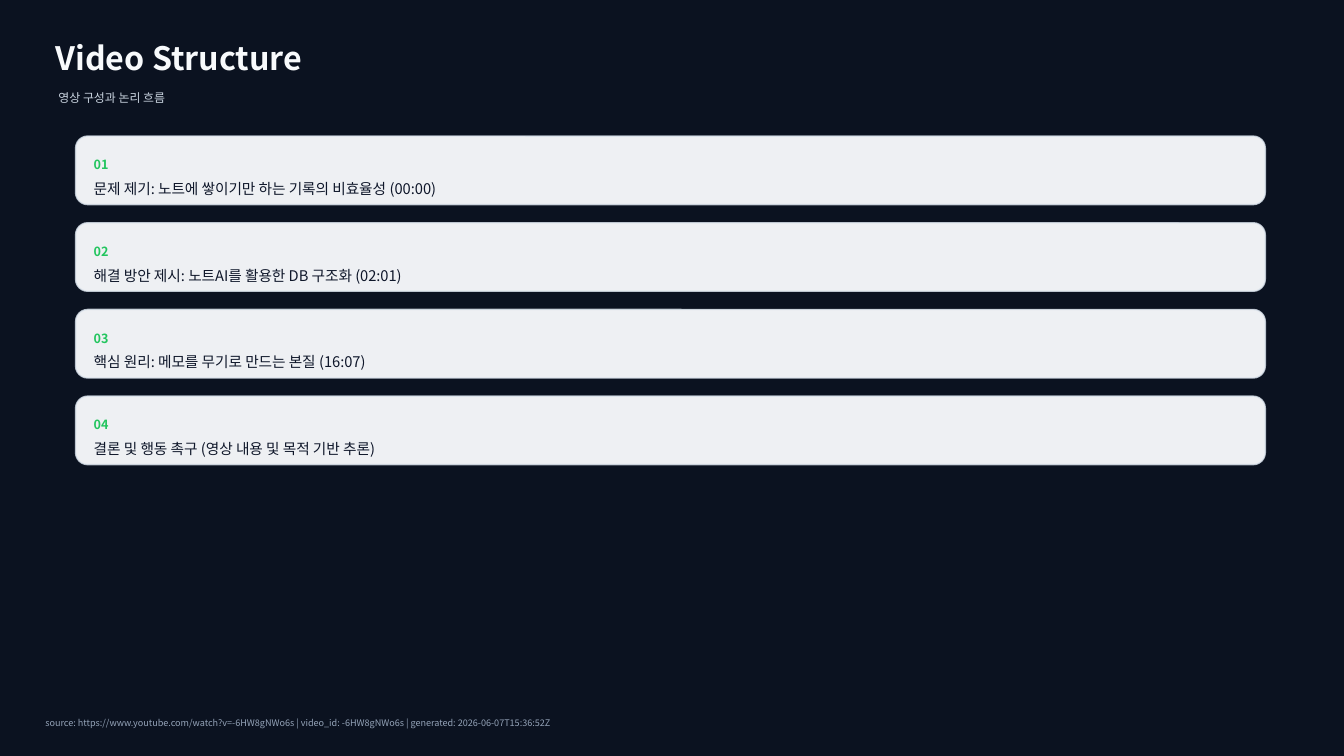
from lxml import etree
from pptx import Presentation
from pptx import util as u
from pptx.dml.color import RGBColor
from pptx.enum import shapes, text
from pptx.oxml import ns

NAVY = RGBColor(0x0B, 0x12, 0x20)
WHITE = RGBColor(0xF8, 0xFA, 0xFC)
MIST = RGBColor(0xCB, 0xD5, 0xE1)
EDGE = RGBColor(0xD7, 0xE0, 0xEA)
GREEN = RGBColor(0x22, 0xC5, 0x5E)
INK = RGBColor(0x0F, 0x17, 0x2A)
GREY = RGBColor(0x94, 0xA3, 0xB8)
FONT = "Noto Sans CJK KR"

WIDE, HIGH = 13.33, 7.5
LEFT, TOP = 0.75, 1.35
CARD_W, CARD_H, GAP = 11.8, 0.68, 0.18
PAD = 0.18

PARTS = [
    "문제 제기: 노트에 쌓이기만 하는 기록의 비효율성 (00:00)",
    "해결 방안 제시: 노트AI를 활용한 DB 구조화 (02:01)",
    "핵심 원리: 메모를 무기로 만드는 본질 (16:07)",
    "결론 및 행동 촉구 (영상 내용 및 목적 기반 추론)",
]
SOURCE = ("source: https://www.youtube.com/watch?v=-6HW8gNWo6s | "
          "video_id: -6HW8gNWo6s | generated: 2026-06-07T15:36:52Z")


def add_text(slide, words, area, size, color, bold=False):
    box = slide.shapes.add_textbox(*map(u.Inches, area))
    frame = box.text_frame
    frame.word_wrap = True
    frame.vertical_anchor = text.MSO_ANCHOR.MIDDLE
    frame.margin_left = frame.margin_right = 0
    frame.margin_top = frame.margin_bottom = 0
    para = frame.paragraphs[0]
    para.text = words
    font = para.font
    font.name, font.size, font.bold = FONT, u.Pt(size), bold
    font.color.rgb = color
    props = para._p.pPr.find(ns.qn("a:defRPr"))
    latin = props.find(ns.qn("a:latin"))
    asian = etree.Element(ns.qn("a:ea"), typeface=FONT)
    latin.addnext(asian)


def set_alpha(paint, share):
    """Make a solid a:solidFill element partly opaque, in percent."""
    etree.SubElement(paint[0], ns.qn("a:alpha"), val=str(share * 1000))


def add_card(slide, row, words):
    top = TOP + row * (CARD_H + GAP)
    card = slide.shapes.add_shape(
        shapes.MSO_SHAPE.ROUNDED_RECTANGLE,
        *map(u.Inches, (LEFT, top, CARD_W, CARD_H)))
    card.adjustments[0] = 0.176
    card.shadow.inherit = False
    card.fill.solid()
    card.fill.fore_color.rgb = WHITE
    card.line.color.rgb = EDGE
    card.line.width = u.Pt(1)
    props = card._element.spPr
    set_alpha(props.find(ns.qn("a:solidFill")), 96)
    set_alpha(props.find(ns.qn("a:ln")).find(ns.qn("a:solidFill")), 80)

    left, width = LEFT + PAD, CARD_W - 2 * PAD
    add_text(slide, f"{row + 1:02}", (left, top + 0.16, width, 0.25),
             9, GREEN, True)
    add_text(slide, words, (left, top + 0.5, width, 0.04), 10.5, INK)


def main():
    deck = Presentation()
    deck.slide_width, deck.slide_height = u.Inches(WIDE), u.Inches(HIGH)
    slide = deck.slides.add_slide(deck.slide_layouts[6])
    slide.background.fill.solid()
    slide.background.fill.fore_color.rgb = NAVY

    add_text(slide, "Video Structure", (0.55, 0.35, 12, 0.45), 23, WHITE, True)
    add_text(slide, "영상 구성과 논리 흐름", (0.58, 0.83, 11.5, 0.28), 8.5, MIST)
    for row, words in enumerate(PARTS):
        add_card(slide, row, words)
    add_text(slide, SOURCE, (0.45, 7.05, 12.4, 0.25), 6.5, GREY)
    deck.save("out.pptx")


if __name__ == "__main__":
    main()
